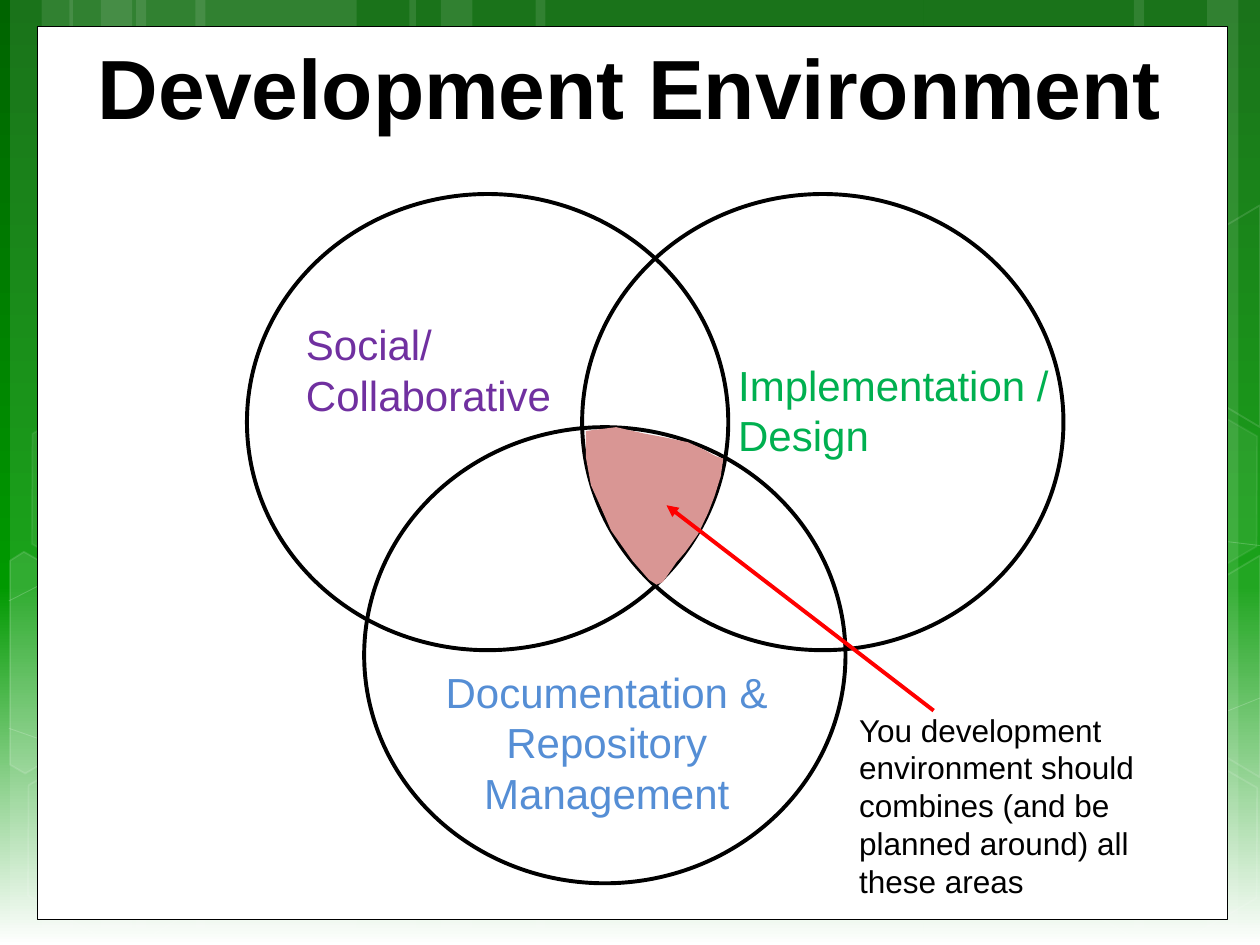
import copy
from typing import NamedTuple

import pptx
import pptx.dml.color
import pptx.enum.shapes
import pptx.enum.text
import pptx.oxml
import pptx.oxml.ns
import pptx.util

Inches = pptx.util.Inches
Pt = pptx.util.Pt
RGBColor = pptx.dml.color.RGBColor
Shapes = pptx.enum.shapes.MSO_SHAPE
Align = pptx.enum.text.PP_ALIGN
qn = pptx.oxml.ns.qn

BLACK = RGBColor(0x00, 0x00, 0x00)
WHITE = RGBColor(0xFF, 0xFF, 0xFF)
DARK_GREEN = RGBColor(0x00, 0x64, 0x00)
MID_GREEN = RGBColor(0x00, 0x99, 0x00)
PURPLE = RGBColor(0x70, 0x30, 0xA0)
GREEN = RGBColor(0x00, 0xB0, 0x50)
BLUE = RGBColor(0x55, 0x8E, 0xD5)
ROSE = RGBColor(0xD9, 0x96, 0x94)
RED = RGBColor(0xFF, 0x00, 0x00)

SLIDE_WIDTH, SLIDE_HEIGHT = 10, 7.5
CIRCLE_WIDTH, CIRCLE_HEIGHT = 3.82, 3.62
HEXAGON_WIDTH, HEXAGON_HEIGHT = 1.75, 1.52


class Box(NamedTuple):
    left: float
    top: float
    width: float
    height: float


class Paint(NamedTuple):
    color: RGBColor
    alpha: int = 100


class Stroke(NamedTuple):
    color: RGBColor
    width: float
    alpha: int = 100


class Hexagon(NamedTuple):
    left: float
    top: float
    fill_alpha: int
    line_alpha: int


class Outline(NamedTuple):
    points: list
    fill_alpha: int


def set_alpha(fill, element, alpha: int) -> None:
    if alpha < 100:
        color = element.find(".//" + qn("a:srgbClr"))
        pptx.oxml.parse_xml(
            f'<a:alpha {pptx.oxml.ns.nsdecls("a")} val="{alpha * 1000}"/>'
        ) if color is None else color.append(
            pptx.oxml.parse_xml(f'<a:alpha {pptx.oxml.ns.nsdecls("a")} val="{alpha * 1000}"/>')
        )


def set_stroke(line, properties, stroke: Stroke) -> None:
    line.color.rgb = stroke.color
    line.width = Pt(stroke.width)
    set_alpha(line.fill, properties.find(qn("a:ln")), stroke.alpha)


def style(shape, fill: Paint | None, stroke: Stroke | None) -> None:
    shape.shadow.inherit = False
    properties = shape._element.spPr
    if fill:
        shape.fill.solid()
        shape.fill.fore_color.rgb = fill.color
        set_alpha(shape.fill, properties.find(qn("a:solidFill")), fill.alpha)
    else:
        shape.fill.background()
    if stroke:
        set_stroke(shape.line, properties, stroke)
    else:
        shape.line.fill.background()


def add_preset(slide, preset, box: Box, fill: Paint | None = None,
               stroke: Stroke | None = None):
    shape = slide.shapes.add_shape(preset, *map(Inches, box))
    style(shape, fill, stroke)
    return shape


def add_polygon(slide, points: list, fill: Paint | None, stroke: Stroke | None = None) -> None:
    corners = [(Inches(x), Inches(y)) for x, y in points]
    builder = slide.shapes.build_freeform(*corners[0], scale=1.0)
    builder.add_line_segments(corners[1:], close=True)
    style(builder.convert_to_shape(), fill, stroke)


def add_line(slide, start: tuple, end: tuple, stroke: Stroke, arrow: bool = False) -> None:
    connector = slide.shapes.add_connector(
        pptx.enum.shapes.MSO_CONNECTOR.STRAIGHT, *map(Inches, start + end))
    properties = connector._element.spPr
    set_stroke(connector.line, properties, stroke)
    if arrow:
        pptx.oxml.ns.qn
        head = pptx.oxml.parse_xml(f'<a:tailEnd {pptx.oxml.ns.nsdecls("a")} type="triangle"/>')
        properties.find(qn("a:ln")).append(head)
    properties.append(pptx.oxml.parse_xml(f'<a:effectLst {pptx.oxml.ns.nsdecls("a")}/>'))


def add_text(slide, text: str, box: Box, *, size: int, color: RGBColor, bold: bool = False,
             align=Align.LEFT, wrap: bool = False) -> None:
    frame = slide.shapes.add_textbox(*map(Inches, box)).text_frame
    frame.word_wrap = wrap
    frame.auto_size = pptx.enum.text.MSO_AUTO_SIZE.SHAPE_TO_FIT_TEXT
    frame.text = text
    for paragraph in frame.paragraphs:
        paragraph.alignment = align
        font = paragraph.runs[0].font
        font.name = "Arial"
        font.size = Pt(size)
        font.bold = bold
        font.color.rgb = color


def paint_background(slide) -> None:
    fill = slide.background.fill
    fill.gradient()
    fill.gradient_angle = 270
    stop_list = slide.element.find(".//" + qn("a:gsLst"))
    stop_list.append(copy.deepcopy(stop_list[-1]))
    colors = [(0, DARK_GREEN), (0.62, MID_GREEN), (1, WHITE)]
    for stop, (position, color) in zip(fill.gradient_stops, colors):
        stop.position = position
        stop.color.rgb = color


def draw_backdrop(slide) -> None:
    stripes = [(1.08, 1.75), (0.08, 0.5), (0.33, 0.83), (1.55, 1.75), (0.55, 0.5), (0.8, 0.83),
               (7.33, 1.75), (9.58, 0.42), (9, 0.83), (4.25, 3.08), (3.25, 0.5), (3.5, 0.83)]
    for left, width in stripes:
        add_preset(slide, Shapes.RECTANGLE, Box(left, 0, width, SLIDE_HEIGHT), Paint(WHITE, 10))

    edge_lines = [((0.07, 4.77), (0.5, 4.55)), ((0.07, 5.78), (0.5, 5.93)),
                  ((9.5, 4.27), (10, 4.33)), ((9.5, 5.74), (10, 5.54))]
    for start, end in edge_lines:
        add_line(slide, start, end, Stroke(WHITE, 0.5, 20))

    hexagons = [Hexagon(0.11, 5.91, 0, 12), Hexagon(0.14, 3.12, 7, 8),
                Hexagon(8.34, 5.93, 0, 12), Hexagon(8.34, 3.14, 7, 8)]
    for left, top, fill_alpha, line_alpha in hexagons:
        hexagon = add_preset(slide, Shapes.HEXAGON, Box(left, top, HEXAGON_WIDTH, HEXAGON_HEIGHT),
                             Paint(WHITE, fill_alpha) if fill_alpha else None,
                             Stroke(WHITE, 1, line_alpha))
        hexagon.adjustments[0] = 0.285
        hexagon.rotation = 30

    cut_hexagons = [
        Outline([(0.08, 4.45), (0.19, 4.38), (0.96, 4.82), (0.95, 5.7), (0.2, 6.14),
                 (0.08, 6.07)], 10),
        Outline([(9.26, 4.85), (10, 4.41), (10, 6.17), (9.26, 5.73)], 4),
        Outline([(9.26, 2.07), (10, 1.63), (10, 3.39), (9.26, 2.95)], 0),
    ]
    for points, fill_alpha in cut_hexagons:
        add_polygon(slide, points, Paint(WHITE, fill_alpha) if fill_alpha else None,
                    Stroke(WHITE, 1, 12))

    add_preset(slide, Shapes.RECTANGLE, Box(0.3, 0.21, 9.44, 7.09), Paint(WHITE),
               Stroke(BLACK, 0.5))


def draw_venn(slide) -> None:
    for left, top in [(1.96, 1.54), (2.89, 3.39), (4.62, 1.54)]:
        add_preset(slide, Shapes.OVAL, Box(left, top, CIRCLE_WIDTH, CIRCLE_HEIGHT),
                   stroke=Stroke(BLACK, 2.25))
    add_text(slide, "Development Environment", Box(0.63, 0.23, 8.74, 0.91), size=48,
             color=BLACK, bold=True, align=Align.CENTER)
    add_text(slide, "Social/\nCollaborative", Box(2.33, 2.48, 2.17, 0.91), size=24, color=PURPLE)
    add_text(slide, "Implementation / Design", Box(5.76, 2.8, 2.71, 0.91), size=24,
             color=GREEN, wrap=True)
    add_text(slide, "Documentation &\nRepository\nManagement", Box(3.42, 5.24, 2.79, 1.31),
             size=24, color=BLUE, align=Align.CENTER)
    overlap = [(4.65, 3.42), (4.89, 3.39), (5.11, 3.44), (5.27, 3.47), (5.46, 3.51), (5.57, 3.56),
               (5.68, 3.62), (5.74, 3.64), (5.72, 3.78), (5.67, 3.94), (5.62, 4.07), (5.54, 4.24),
               (5.44, 4.38), (5.37, 4.46), (5.26, 4.62), (5.21, 4.64), (5.15, 4.6), (5.02, 4.45),
               (4.85, 4.21), (4.78, 4.05), (4.69, 3.85), (4.65, 3.63)]
    add_polygon(slide, overlap, Paint(ROSE))
    add_line(slide, (7.41, 5.64), (5.29, 4.01), Stroke(RED, 2.25), arrow=True)
    add_text(slide, "You development environment should combines (and be planned around) "
             "all these areas", Box(6.72, 5.59, 2.83, 1.62), size=18, color=BLACK, wrap=True)


def main() -> None:
    deck = pptx.Presentation()
    deck.slide_width = Inches(SLIDE_WIDTH)
    deck.slide_height = Inches(SLIDE_HEIGHT)
    slide = deck.slides.add_slide(deck.slide_layouts[6])
    paint_background(slide)
    draw_backdrop(slide)
    draw_venn(slide)
    deck.save("out.pptx")


if __name__ == "__main__":
    main()
